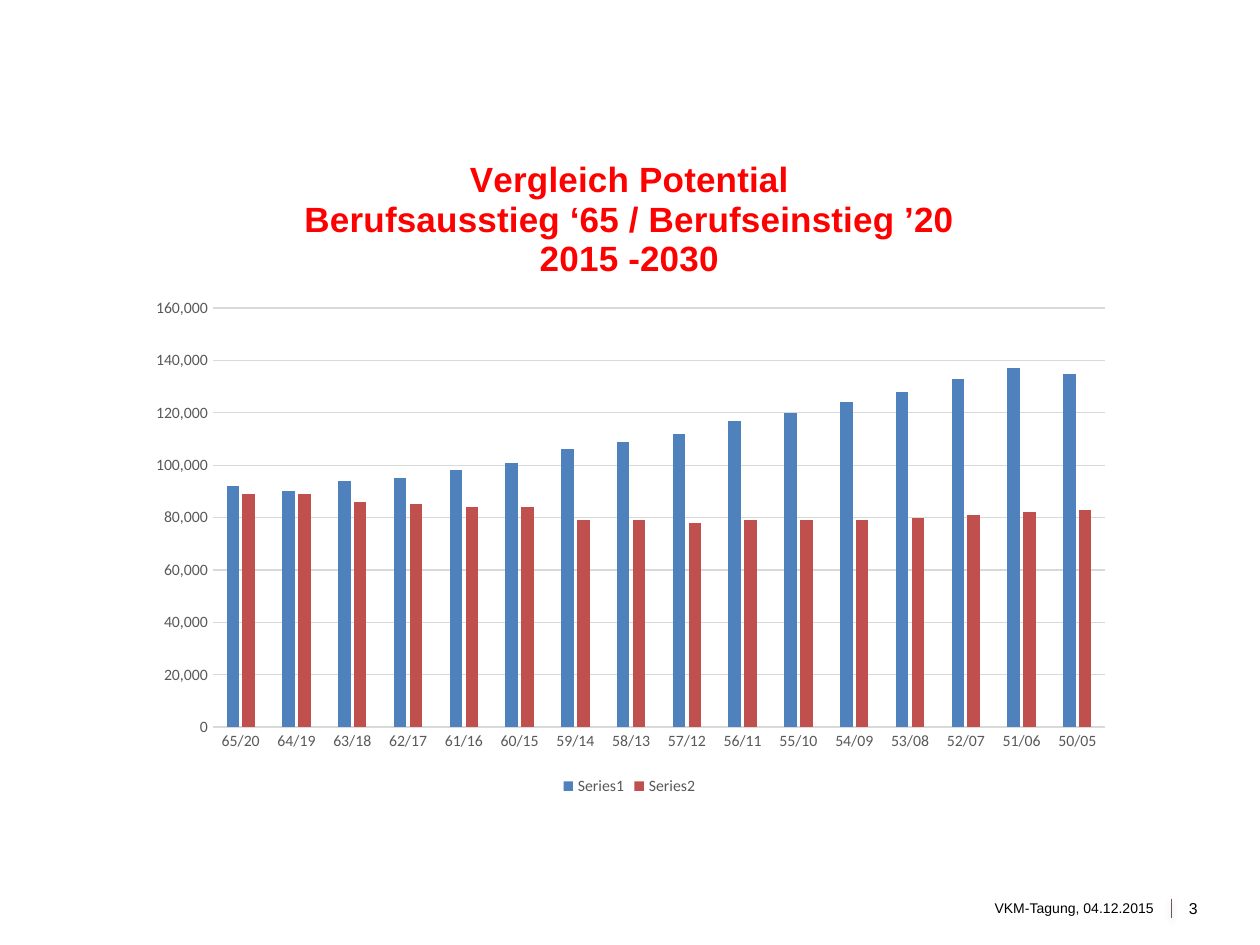
from lxml import etree
from pptx import Presentation, util as u
from pptx.chart.data import CategoryChartData
from pptx.dml.color import RGBColor
from pptx.enum import chart as ch, shapes, text
from pptx.oxml import parse_xml
from pptx.oxml.ns import qn

W, H = u.Inches(10), u.Inches(7.5)
A = "http://schemas.openxmlformats.org/drawingml/2006/main"
C = "http://schemas.openxmlformats.org/drawingml/2006/chart"
GREY, RULE = "595959", "D9D9D9"
TITLE = ["Vergleich Potential", "Berufsausstieg ‘65 / Berufseinstieg ’20", "2015 -2030"]
YEARS = [f"{65 - i}/{20 - i:02d}" for i in range(16)]
SERIES = {
    "Series1": ("4F81BD", [92, 90, 94, 95, 98, 101, 106, 109,
                           112, 117, 120, 124, 128, 133, 137, 135]),
    "Series2": ("C0504D", [89, 89, 86, 85, 84, 84, 79, 79,
                           78, 79, 79, 79, 80, 81, 82, 83]),
}


def rgb(value):
    """Turn a hex string into a colour."""
    return RGBColor.from_string(value)


def area(x, y, w, h):
    """Turn shares of the slide into lengths."""
    return int(x * W), int(y * H), int(w * W), int(h * H)


def style(font, color, **values):
    """Set a font's colour and format values."""
    font.color.rgb = rgb(color)
    for name, value in values.items():
        setattr(font, name, value)


def rule(line, color, width):
    """Set a line's colour and width."""
    line.color.rgb = rgb(color)
    line.width = u.Pt(width)


def label(s, box, words, size, align):
    """Write one line of footer text in a box."""
    tf = s.shapes.add_textbox(*area(*box)).text_frame
    for name, value in {"word_wrap": True, "margin_top": 0, "margin_bottom": 0,
                        "vertical_anchor": text.MSO_ANCHOR.MIDDLE}.items():
        setattr(tf, name, value)
    p = tf.paragraphs[0]
    p.alignment = align
    r = p.add_run()
    r.text = words
    style(r.font, "000000", size=u.Pt(size), name="Arial")


def footer(s, box):
    """Place the event, the divider and the page number."""
    x, y, w, h = box
    split = x + 0.855 * w
    cx, top, _, tall = area(split, y, 0, h)
    line = s.shapes.add_connector(shapes.MSO_CONNECTOR.STRAIGHT, cx, top, cx, top + tall)
    rule(line.line, "66585B", 0.5)
    line._element.spPr.append(parse_xml(
        f'<a:effectLst xmlns:a="{A}"><a:outerShdw blurRad="39370" dist="20320" dir="5400000">'
        '<a:srgbClr val="808080"><a:alpha val="38000"/></a:srgbClr></a:outerShdw></a:effectLst>'))
    label(s, (x, y, split - x - 0.004, h), "VKM-Tagung, 04.12.2015", 8, text.PP_ALIGN.RIGHT)
    label(s, (split + 0.004, y, x + w - split - 0.004, h), "3", 9, text.PP_ALIGN.LEFT)


def chart_title(chart):
    """Write the red heading above the columns."""
    tf = chart.chart_title.text_frame
    for i, words in enumerate(TITLE):
        p = tf.paragraphs[0] if i == 0 else tf.add_paragraph()
        p.alignment = text.PP_ALIGN.CENTER
        r = p.add_run()
        r.text = words
        style(r.font, "FF0000", size=u.Pt(20), bold=True, name="Arial")
    chart.chart_title.include_in_layout = False


def plot_layout(chart, x, y, w, h):
    """Fix the inner plot area as shares of the chart."""
    area_el = chart._chartSpace.chart.plotArea
    for old in area_el.findall(qn("c:layout")):
        area_el.remove(old)
    layout = etree.Element(qn("c:layout"))
    manual = etree.SubElement(layout, qn("c:manualLayout"))
    for tag, value in {"layoutTarget": "inner", "xMode": "edge", "yMode": "edge",
                       "x": x, "y": y, "w": w, "h": h}.items():
        etree.SubElement(manual, f"{{{C}}}{tag}").set("val", str(value))
    area_el.insert(0, layout)


def comparison(s, box):
    """Place the column chart of leavers and entrants."""
    data = CategoryChartData(number_format="#,##0")
    data.categories = YEARS
    for name, (_, thousands) in SERIES.items():
        data.add_series(name, [v * 1000 for v in thousands])
    chart = s.shapes.add_chart(ch.XL_CHART_TYPE.COLUMN_CLUSTERED, *area(*box), data).chart
    style(chart.font, "000000", size=u.Pt(10), name="Calibri")
    chart_title(chart)
    plot_layout(chart, 0.08, 0.26, 0.9, 0.63)
    plot = chart.plots[0]
    plot.gap_width, plot.overlap, plot.vary_by_categories = 219, -27, False
    for series, (color, _) in zip(plot.series, SERIES.values()):
        series.format.fill.solid()
        series.format.fill.fore_color.rgb = rgb(color)
    chart.has_legend = True
    chart.legend.position = ch.XL_LEGEND_POSITION.BOTTOM
    chart.legend.include_in_layout = False
    cat, val = chart.category_axis, chart.value_axis
    for part in (cat.tick_labels, val.tick_labels, chart.legend):
        style(part.font, GREY, size=u.Pt(9), name="Calibri")
    for axis in (cat, val):
        axis.major_tick_mark = axis.minor_tick_mark = ch.XL_TICK_MARK.NONE
    rule(cat.format.line, RULE, 0.75)
    rule(val.major_gridlines.format.line, RULE, 0.75)
    val.format.line.fill.background()
    val.minimum_scale, val.maximum_scale, val.major_unit = 0, 160000, 20000
    val.tick_labels.number_format = "#,##0"
    val.tick_labels.number_format_is_linked = False


def main():
    """Build and save the slide."""
    prs = Presentation()
    prs.slide_width, prs.slide_height = W, H
    s = prs.slides.add_slide(prs.slide_layouts[6])
    footer(s, (0.539, 0.951, 0.457, 0.02))
    comparison(s, (0.106, 0.143, 0.787, 0.704))
    prs.save("out.pptx")


if __name__ == "__main__":
    main()
